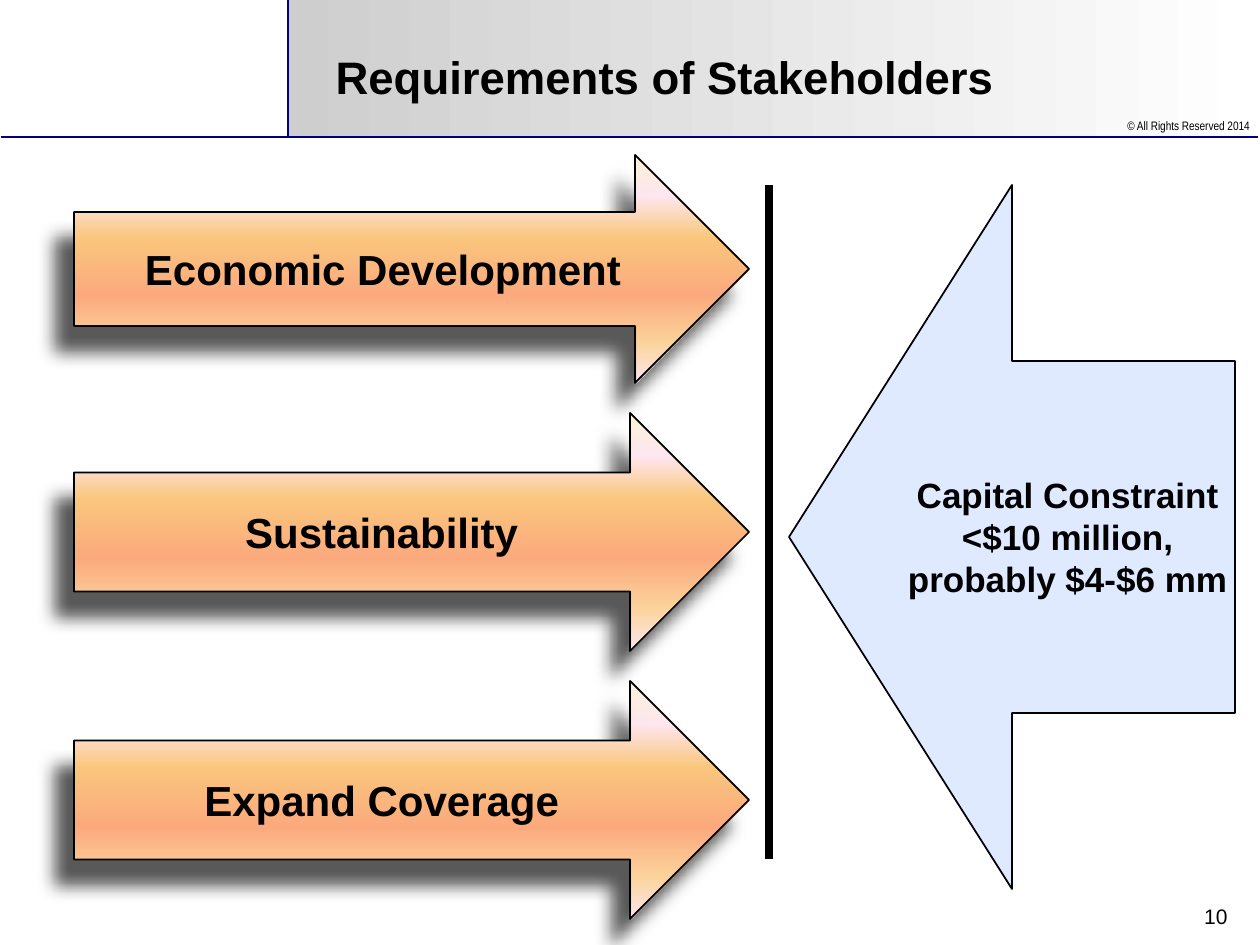
"""Build the stakeholder requirements slide: three demand arrows against one capital constraint."""
from lxml import etree
from pptx import Presentation
from pptx import util as u
from pptx.dml.color import RGBColor
from pptx.enum import shapes, text
from pptx.oxml.ns import nsdecls, qn

TITLE = "Requirements of Stakeholders"
RIGHTS = "© All Rights Reserved 2014"
PAGE = "10"
DEMANDS = [("Economic Development", 155, 228), ("Sustainability", 413, 238), ("Expand Coverage", 681, 238)]
CONSTRAINT = "Capital Constraint\v<$10 million,\vprobably $4-$6 mm"
HEADER_STOPS = [(0, "CECECE", 100), (100, "FFFFFF", 100)]
DEMAND_STOPS = [(0, "FBEAC7", 59), (18, "FEE7F2", 100), (36, "FAC77D", 100),
                (61, "FBA97D", 100), (82, "FBD49C", 100), (100, "FEE7F2", 100)]
SHADOW = ('<a:outerShdw %s blurRad="127000" dist="228600" dir="7620000" algn="tl" rotWithShape="0">'
          '<a:srgbClr val="595959"/></a:outerShdw>' % nsdecls("a"))
BLACK, NAVY, PALE_BLUE = "000000", "000080", "DFE9FF"
ARROW, LEFT, CENTER, RIGHT = shapes.MSO_SHAPE, text.PP_ALIGN.LEFT, text.PP_ALIGN.CENTER, text.PP_ALIGN.RIGHT


def px(n):
    return u.Emu(round(n * 914400 / 126))


def rgb(value):
    return RGBColor.from_string(value)


def write(sp, words, size, align, bold=False, font="Arial", wrap=True, anchor=text.MSO_ANCHOR.MIDDLE):
    tf = sp.text_frame
    tf.text = words
    tf.word_wrap = wrap
    tf.vertical_anchor = anchor
    p = tf.paragraphs[0]
    p.alignment = align
    for r in p.runs:
        r.font.name, r.font.size, r.font.bold = font, u.Pt(size), bold
        r.font.color.rgb = rgb(BLACK)


def add_shape(s, kind, x, y, w, h, line=None):
    sp = s.shapes.add_shape(kind, px(x), px(y), px(w), px(h))
    sp.shadow.inherit = False
    if line:
        sp.line.color.rgb = rgb(line)
        sp.line.width = u.Pt(1)
    else:
        sp.line.fill.background()
    return sp


def set_gradient(sp, stops, angle):
    gs = "".join(f'<a:gs pos="{pos * 1000}"><a:srgbClr val="{color}"><a:alpha val="{alpha * 1000}"/>'
                 '</a:srgbClr></a:gs>' for pos, color, alpha in stops)
    fill = (f'<a:gradFill {nsdecls("a")} rotWithShape="1"><a:gsLst>{gs}</a:gsLst>'
            f'<a:lin ang="{angle * 60000}" scaled="0"/></a:gradFill>')
    sp._element.spPr.find(qn("a:prstGeom")).addnext(etree.fromstring(fill))


def add_line(s, x1, y1, x2, y2, color, width):
    line = s.shapes.add_connector(shapes.MSO_CONNECTOR.STRAIGHT, px(x1), px(y1), px(x2), px(y2))
    line.line.color.rgb = rgb(color)
    line.line.width = u.Pt(width)
    etree.SubElement(line._element.spPr, qn("a:effectLst"))


def add_text(s, x, y, w, h, words, size, font="Arial"):
    sp = s.shapes.add_textbox(px(x), px(y), px(w), px(h))
    write(sp, words, size, RIGHT, font=font, anchor=text.MSO_ANCHOR.TOP)


def main():
    prs = Presentation()
    prs.slide_width, prs.slide_height = px(1260), px(945)
    s = prs.slides.add_slide(prs.slide_layouts[5])

    header = add_shape(s, ARROW.RECTANGLE, 288, 0, 970, 137)
    set_gradient(header, HEADER_STOPS, 0)
    s.shapes._spTree.insert(2, header._element)
    add_line(s, 1, 137, 1258, 137, NAVY, 1)
    add_line(s, 288, 0, 288, 137, NAVY, 1)
    add_text(s, 1078, 112, 184, 42, RIGHTS, 7, "Arial Narrow")

    title = s.shapes.title
    title.left, title.top, title.width, title.height = px(323), px(28), px(853), px(96)
    write(title, TITLE, 26, LEFT, bold=True)
    add_text(s, 978, 897, 262, 39, PAGE, 12)

    for words, top, height in DEMANDS:
        sp = add_shape(s, ARROW.RIGHT_ARROW, 74, top, 675, height, BLACK)
        set_gradient(sp, DEMAND_STOPS, 90)
        sp._element.spPr.find(qn("a:effectLst")).append(etree.fromstring(SHADOW))
        write(sp, words, 24, CENTER, bold=True, wrap=False)

    add_line(s, 769, 185, 769, 859, BLACK, 4.25)
    sp = add_shape(s, ARROW.LEFT_ARROW, 789, 185, 446, 704, BLACK)
    sp.fill.solid()
    sp.fill.fore_color.rgb = rgb(PALE_BLUE)
    write(sp, CONSTRAINT, 20, CENTER, bold=True, wrap=False)
    prs.save("out.pptx")


if __name__ == "__main__":
    main()
